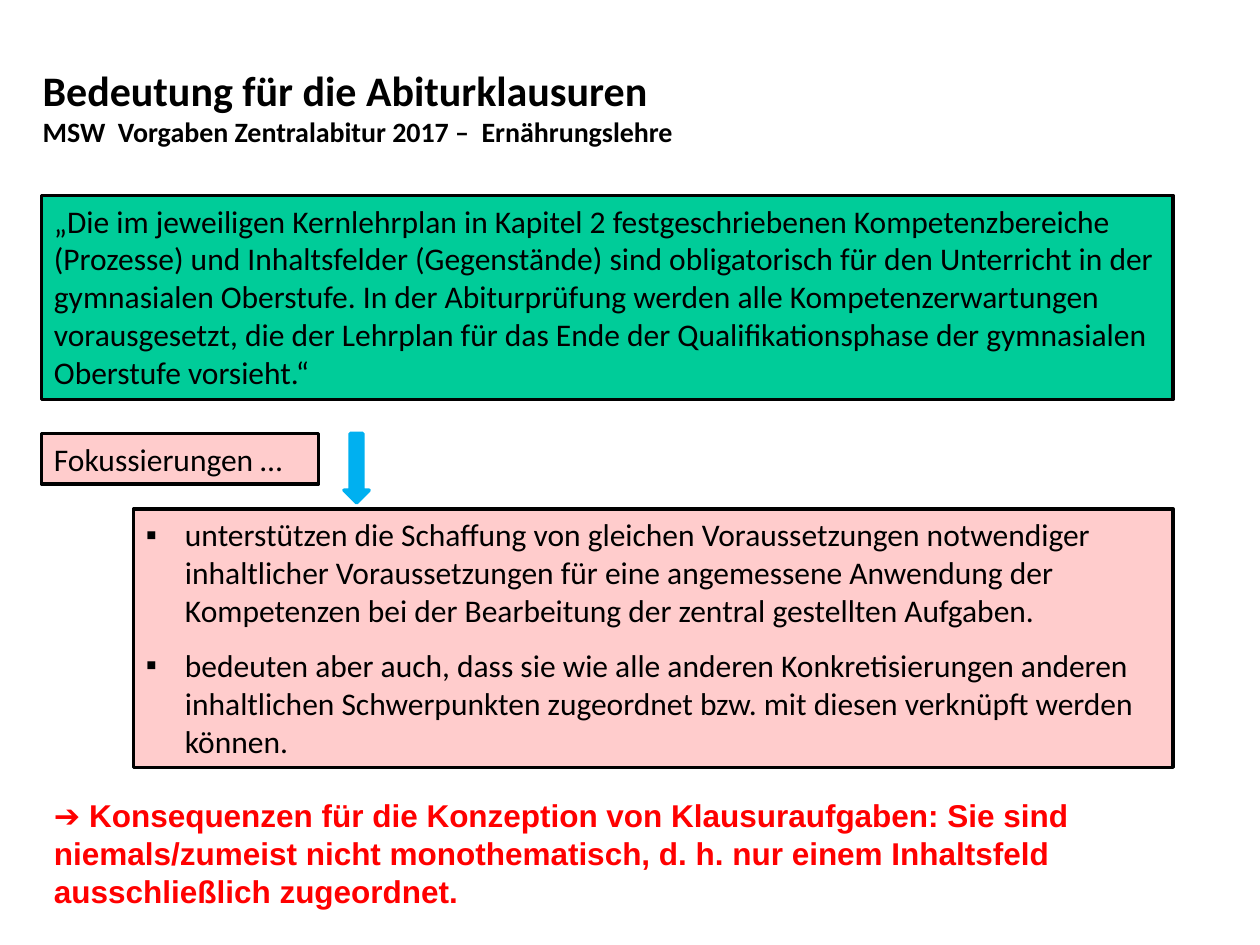
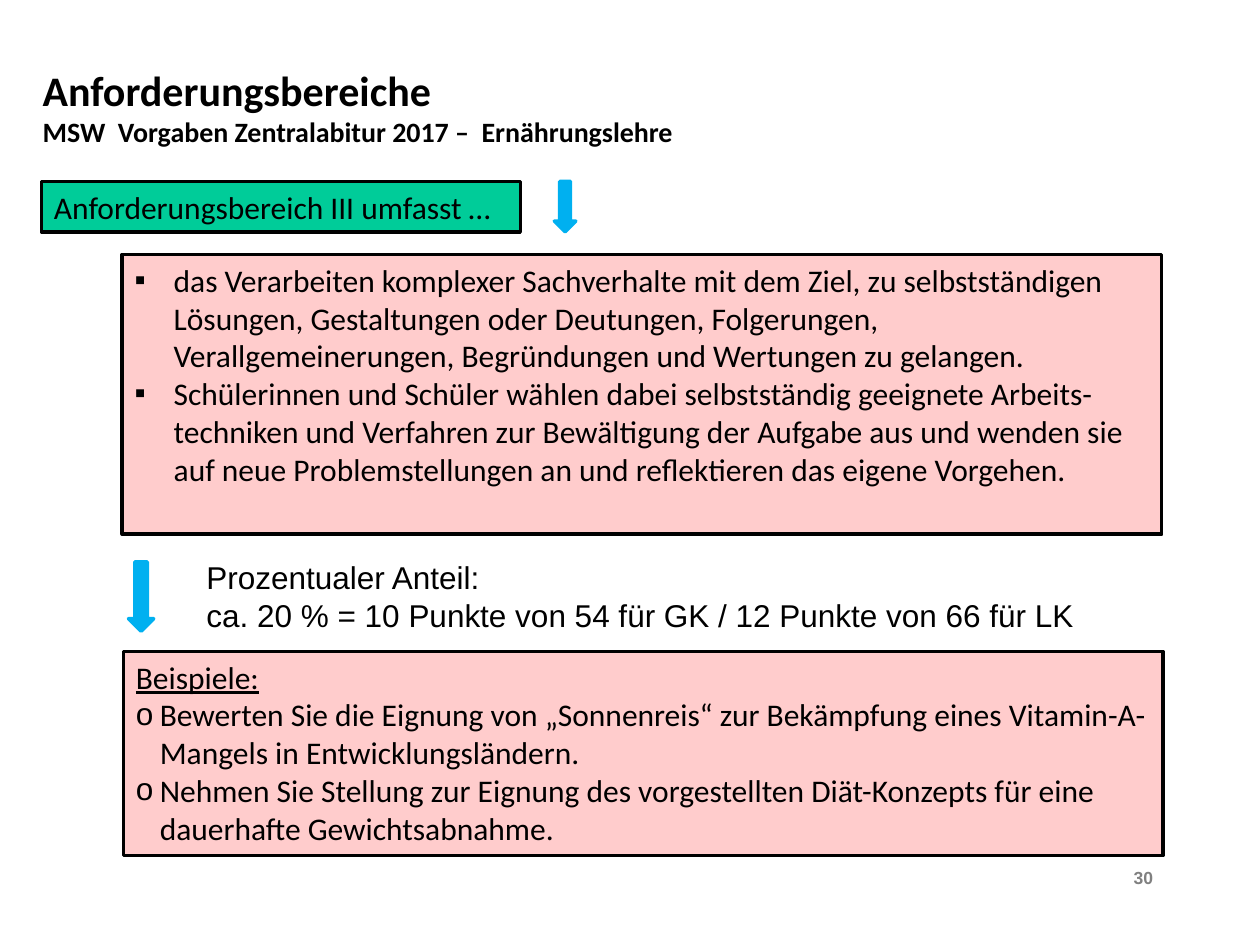
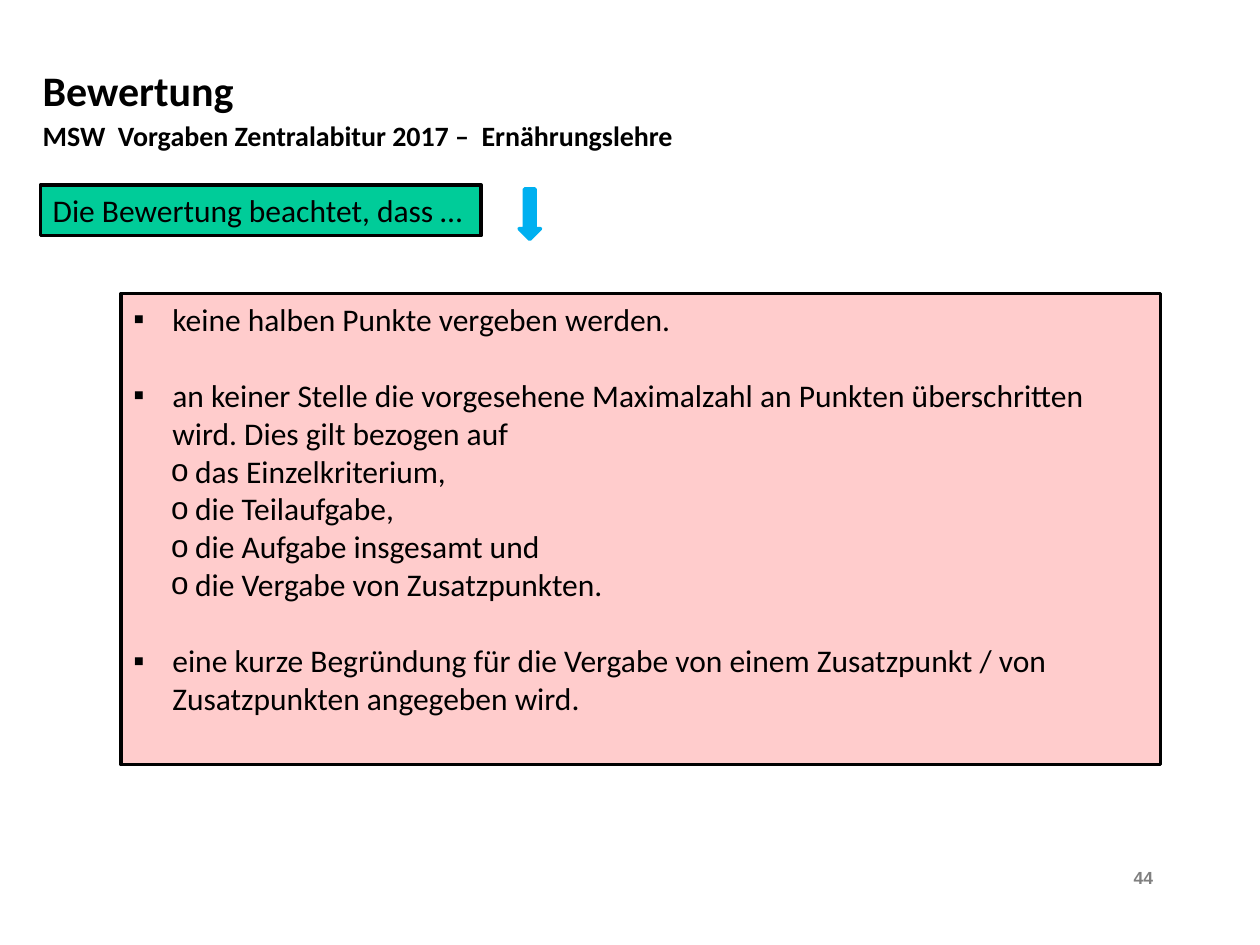
from pptx import Presentation
from pptx.dml.color import RGBColor
from pptx.enum.shapes import MSO_SHAPE as SHAPE
from pptx.enum.text import MSO_ANCHOR as ANCHOR, PP_ALIGN as ALIGN
from pptx.oxml.ns import qn
from pptx.util import Inches, Pt
from lxml import etree

rgb = RGBColor.from_string
BLACK, WHITE, RED, GREY = "000000", "FFFFFF", "FF0000", "808080"
GREEN, PINK, BLUE = "00CC99", "FFCCCC", "00B0F0"
SUBTITLE = "MSW  Vorgaben Zentralabitur 2017 –  Ernährungslehre"

# Bullet styles: character, text indent, hanging indent
SQUARE = ("▪", 0.31, 0.31)
CIRCLE = ("o", 0.19, 0.19)
SUB_CIRCLE = ("o", 0.49, 0.19)


def add_text(s, x, y, w, h, paras, fill=None, line=None, size=18,
             font="Calibri", color=BLACK, bold=False):
    """Add a box of paragraphs, each a string or (bullet, text, space before)."""
    place = [Inches(v) for v in (x, y, w, h)]
    if fill:
        sp = s.shapes.add_shape(SHAPE.RECTANGLE, *place)
        sp.shadow.inherit = False
        sp.fill.solid()
        sp.fill.fore_color.rgb = rgb(fill)
        if line:
            sp.line.color.rgb = rgb(line)
            sp.line.width = Pt(2)
        else:
            sp.line.fill.background()
    else:
        sp = s.shapes.add_textbox(*place)
    tf = sp.text_frame
    tf.word_wrap = True
    tf.vertical_anchor = ANCHOR.TOP
    for i, para in enumerate(paras):
        bullet, text, gap = (None, para, 0) if isinstance(para, str) else para
        p = tf.add_paragraph() if i else tf.paragraphs[0]
        p.text = text
        p.alignment = ALIGN.LEFT
        if bullet:
            char, indent, hang = bullet
            pPr = p._p.get_or_add_pPr()
            pPr.set("marL", str(Inches(indent)))
            pPr.set("indent", str(-Inches(hang)))
            etree.SubElement(pPr, qn("a:buFont")).set("typeface", "Arial")
            etree.SubElement(pPr, qn("a:buChar")).set("char", char)
        if gap:
            p.space_before = Pt(gap)
        for r in p.runs:
            r.font.name = font
            r.font.size = Pt(size)
            r.font.bold = bold
            r.font.color.rgb = rgb(color)
    return tf


def add_down_arrow(s, x, y, w, h):
    sp = s.shapes.add_shape(SHAPE.DOWN_ARROW, Inches(x), Inches(y), Inches(w), Inches(h))
    sp.shadow.inherit = False
    sp.fill.solid()
    sp.fill.fore_color.rgb = rgb(BLUE)
    sp.line.color.rgb = rgb(BLUE)
    sp.line.width = Pt(2)


prs = Presentation()
prs.slide_width, prs.slide_height = Inches(10), Inches(7.5)

# Title, subtitle and page number of every slide
slides = []
for title, subtitle_y, number in [
    ("Bedeutung für die Abiturklausuren", 0.86, None),
    ("Anforderungsbereiche", 0.86, "30"),
    ("Bewertung", 0.89, "44"),
]:
    s = prs.slides.add_slide(prs.slide_layouts[6])
    tf = add_text(s, 0.24, 0.27, 6.06, 0.88, [title], size=24, bold=True)
    tf.vertical_anchor = ANCHOR.MIDDLE
    add_text(s, 0.24, subtitle_y, 6.41, 0.37, [SUBTITLE], size=16, bold=True)
    if number:
        tf = add_text(s, 7.92, 6.83, 1.33, 0.42, [number],
                      size=10, font="Arial", color=GREY, bold=True)
        tf.paragraphs[0].alignment = ALIGN.RIGHT
    slides.append(s)
exams, levels, grading = slides

# Slide 1: meaning for the exams
add_text(exams, 0.33, 1.55, 8.98, 1.62, [
    "„Die im jeweiligen Kernlehrplan in Kapitel 2 festgeschriebenen Kompetenzbereiche "
    "(Prozesse) und Inhaltsfelder (Gegenstände) sind obligatorisch für den Unterricht in der "
    "gymnasialen Oberstufe. In der Abiturprüfung werden alle Kompetenzerwartungen "
    "vorausgesetzt, die der Lehrplan für das Ende der Qualifikationsphase der gymnasialen "
    "Oberstufe vorsieht.“",
], GREEN, BLACK)
add_text(exams, 0.33, 3.44, 2.2, 0.4, ["Fokussierungen …"], PINK, BLACK)
add_down_arrow(exams, 2.73, 3.44, 0.2, 0.55)
add_text(exams, 1.06, 4.04, 8.25, 2.05, [
    (SQUARE, "unterstützen die Schaffung von gleichen Voraussetzungen notwendiger "
             "inhaltlicher Voraussetzungen für eine angemessene Anwendung der "
             "Kompetenzen bei der Bearbeitung der zentral gestellten Aufgaben.", 0),
    (SQUARE, "bedeuten aber auch, dass sie wie alle anderen Konkretisierungen anderen "
             "inhaltlichen Schwerpunkten zugeordnet bzw. mit diesen verknüpft werden "
             "können.", 10),
], PINK, BLACK)
add_text(exams, 0.33, 6.27, 8.97, 1.01, [
    "➔ Konsequenzen für die Konzeption von Klausuraufgaben: Sie sind niemals/zumeist "
    "nicht monothematisch, d. h. nur einem Inhaltsfeld ausschließlich zugeordnet.",
], WHITE, font="Arial", color=RED, bold=True)

# Slide 2: requirement level III
add_text(levels, 0.33, 1.44, 3.8, 0.4, ["Anforderungsbereich III umfasst …"], GREEN, BLACK)
add_down_arrow(levels, 4.4, 1.44, 0.17, 0.4)
add_text(levels, 0.97, 2.02, 8.25, 2.22, [
    (SQUARE, "das Verarbeiten komplexer Sachverhalte mit dem Ziel, zu selbstständigen "
             "Lösungen, Gestaltungen oder Deutungen, Folgerungen, Verallgemeinerungen, "
             "Begründungen und Wertungen zu gelangen.", 0),
    (SQUARE, "Schülerinnen und Schüler wählen dabei selbstständig geeignete "
             "Arbeits-techniken und Verfahren zur Bewältigung der Aufgabe aus und wenden sie "
             "auf neue Problemstellungen an und reflektieren das eigene Vorgehen.", 0),
], PINK, BLACK)
add_down_arrow(levels, 1.02, 4.46, 0.2, 0.55)
add_text(levels, 1.54, 4.38, 7.4, 0.71, [
    "Prozentualer Anteil:",
    "ca. 20 % = 10 Punkte von 54 für GK / 12 Punkte von 66 für LK",
], font="Arial")
tf = add_text(levels, 0.98, 5.17, 8.25, 1.62, [
    "Beispiele:",
    (CIRCLE, "Bewerten Sie die Eignung von „Sonnenreis“ zur Bekämpfung eines "
             "Vitamin-A-Mangels in Entwicklungsländern.", 0),
    (CIRCLE, "Nehmen Sie Stellung zur Eignung des vorgestellten Diät-Konzepts für eine "
             "dauerhafte Gewichtsabnahme.", 0),
], PINK, BLACK)
tf.paragraphs[0].runs[0].font.underline = True

# Slide 3: grading
add_text(grading, 0.32, 1.47, 3.5, 0.4, ["Die Bewertung beachtet, dass …"], GREEN, BLACK)
add_down_arrow(grading, 4.12, 1.5, 0.17, 0.4)
add_text(grading, 0.96, 2.33, 8.25, 3.74, [
    (SQUARE, "keine halben Punkte vergeben werden.", 0),
    (SQUARE, "an keiner Stelle die vorgesehene Maximalzahl an Punkten überschritten wird. "
             "Dies gilt bezogen auf", 22),
    (SUB_CIRCLE, "das Einzelkriterium,", 0),
    (SUB_CIRCLE, "die Teilaufgabe,", 0),
    (SUB_CIRCLE, "die Aufgabe insgesamt und", 0),
    (SUB_CIRCLE, "die Vergabe von Zusatzpunkten.", 0),
    (SQUARE, "eine kurze Begründung für die Vergabe von einem Zusatzpunkt / von "
             "Zusatzpunkten angegeben wird.", 22),
], PINK, BLACK)

prs.save("out.pptx")
